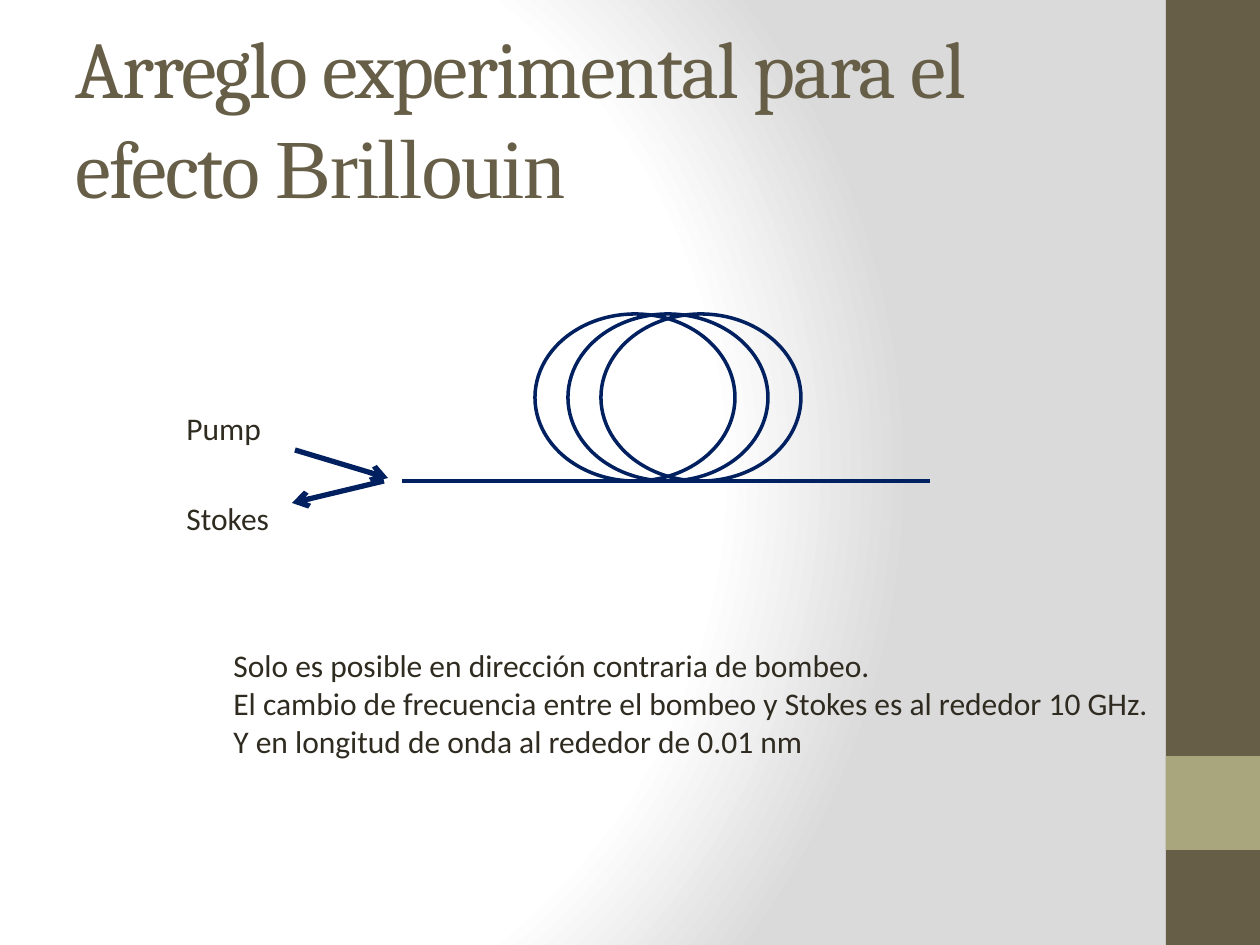
from dataclasses import dataclass

from lxml.etree import SubElement
from pptx import Presentation
from pptx.dml.color import RGBColor
from pptx.enum.shapes import MSO_CONNECTOR, MSO_SHAPE
from pptx.enum.text import MSO_ANCHOR, MSO_AUTO_SIZE, PP_ALIGN
from pptx.oxml import parse_xml
from pptx.oxml.ns import nsdecls, qn
from pptx.util import Pt

EMU_PER_PX = 914400 / 126


@dataclass(frozen=True)
class Theme:
    brown: str = "675E47"
    olive: str = "A9A57C"
    ink: str = "2F2B20"
    navy: str = "002060"
    light: str = "FFFFFF"
    shade: str = "DADADA"
    body_font: str = "Calibri"
    title_font: str = "Cambria"
    name_font: str = "Times New Roman"
    body_size: int = 18
    title_size: int = 46
    name_size: int = 48
    fiber_width: int = 2
    arrow_width: int = 3


THEME = Theme()


def px(*values):
    return [round(v * EMU_PER_PX) for v in values]


def rgb(color):
    return RGBColor.from_string(color)


def style_run(r, font, size, color):
    r.font.name = font
    r.font.size = Pt(size)
    r.font.color.rgb = rgb(color)


def set_background(slide):
    slide.background.fill.solid()
    bg_pr = slide.element.find(".//" + qn("p:bgPr"))
    stops = [(0, THEME.light), (75, THEME.light), (100, THEME.shade)]
    gs = "".join(
        f'<a:gs pos="{pos * 1000}"><a:srgbClr val="{color}"/></a:gs>'
        for pos, color in stops
    )
    bg_pr.replace(bg_pr[0], parse_xml(
        f'<a:gradFill {nsdecls("a")} rotWithShape="1"><a:gsLst>{gs}</a:gsLst>'
        '<a:path path="circle"><a:fillToRect l="20000" t="50000" r="100000" b="50000"/>'
        '</a:path></a:gradFill>'
    ))


def add_band(slide, box, color):
    sp = slide.shapes.add_shape(MSO_SHAPE.RECTANGLE, *px(*box))
    sp.shadow.inherit = False
    sp.fill.solid()
    sp.fill.fore_color.rgb = rgb(color)
    sp.line.fill.background()


def set_title(slide, text, name):
    title = slide.shapes.title
    title.left, title.top, title.width, title.height = px(63, 38, 1050, 157)
    tf = title.text_frame
    tf.word_wrap = True
    tf.auto_size = MSO_AUTO_SIZE.NONE
    tf.vertical_anchor = MSO_ANCHOR.MIDDLE
    p = tf.paragraphs[0]
    p.alignment = PP_ALIGN.LEFT
    for part, font, size in (
        (text, THEME.title_font, THEME.title_size),
        (name, THEME.name_font, THEME.name_size),
    ):
        r = p.add_run()
        r.text = part
        style_run(r, font, size, THEME.brown)
        r.font._element.set("spc", "-100")


def add_loop(group, box):
    sp = group.shapes.add_shape(MSO_SHAPE.OVAL, *px(*box))
    sp.shadow.inherit = False
    sp.fill.background()
    sp.line.color.rgb = rgb(THEME.navy)
    sp.line.width = Pt(THEME.fiber_width)


def add_line(group, ends, width, arrow=False):
    line = group.shapes.add_connector(MSO_CONNECTOR.STRAIGHT, *px(*ends))
    line.line.color.rgb = rgb(THEME.navy)
    line.line.width = Pt(width)
    if arrow:
        SubElement(line.line._get_or_add_ln(), qn("a:tailEnd"), type="arrow")
    SubElement(line._element.spPr, qn("a:effectLst"))


def add_text(slide, box, lines):
    tf = slide.shapes.add_textbox(*px(*box)).text_frame
    tf.word_wrap = False
    tf.auto_size = MSO_AUTO_SIZE.SHAPE_TO_FIT_TEXT
    tf.text = "\n".join(lines)
    for p in tf.paragraphs:
        for r in p.runs:
            style_run(r, THEME.body_font, THEME.body_size, THEME.ink)


def add_fiber_setup(slide):
    group = slide.shapes.add_group_shape()
    loop_left, loop_step = 535, 33
    for position in (0, 2, 1):
        add_loop(group, (loop_left + position * loop_step, 314, 200, 167))
    add_line(group, (402, 481, 930, 481), THEME.fiber_width)
    add_line(group, (295, 450, 388, 478), THEME.arrow_width, arrow=True)
    add_line(group, (384, 481, 292, 503), THEME.arrow_width, arrow=True)


def main():
    prs = Presentation()
    prs.slide_width, prs.slide_height = px(1260, 945)
    slide = prs.slides.add_slide(prs.slide_layouts[5])
    set_background(slide)
    add_band(slide, (1166, 0, 94, 945), THEME.brown)
    add_band(slide, (1166, 756, 94, 94), THEME.olive)
    set_title(slide, "Arreglo experimental para el efecto ", "Brillouin")
    add_fiber_setup(slide)
    add_text(slide, (174, 403, 108, 50), ["Pump"])
    add_text(slide, (174, 493, 122, 50), ["Stokes"])
    add_text(slide, (221, 640, 944, 127), [
        "Solo es posible en dirección contraria de bombeo.",
        "El cambio de frecuencia entre el bombeo y Stokes es al rededor 10 GHz.",
        "Y en longitud de onda al rededor de 0.01 nm",
    ])
    prs.save("out.pptx")


if __name__ == "__main__":
    main()
